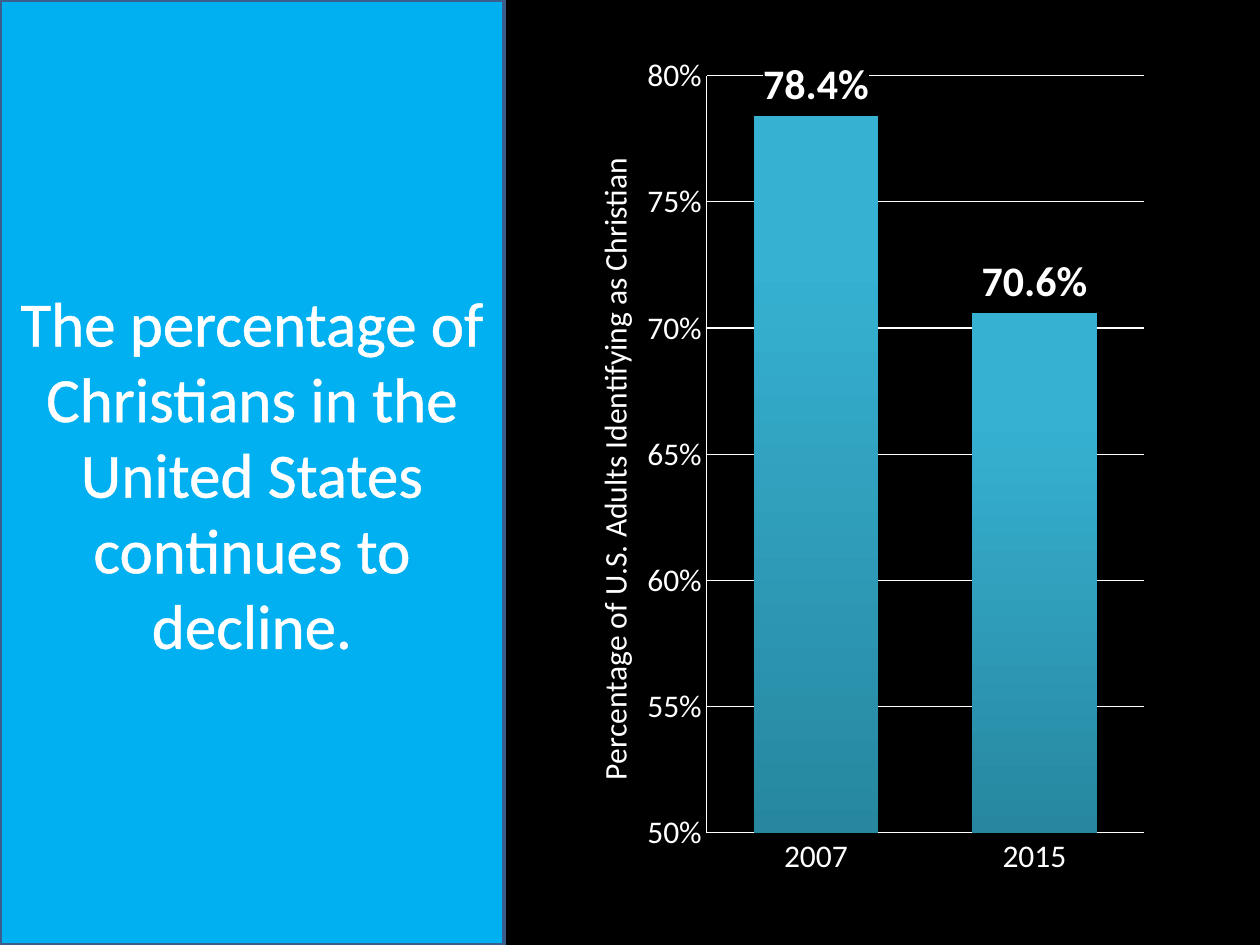
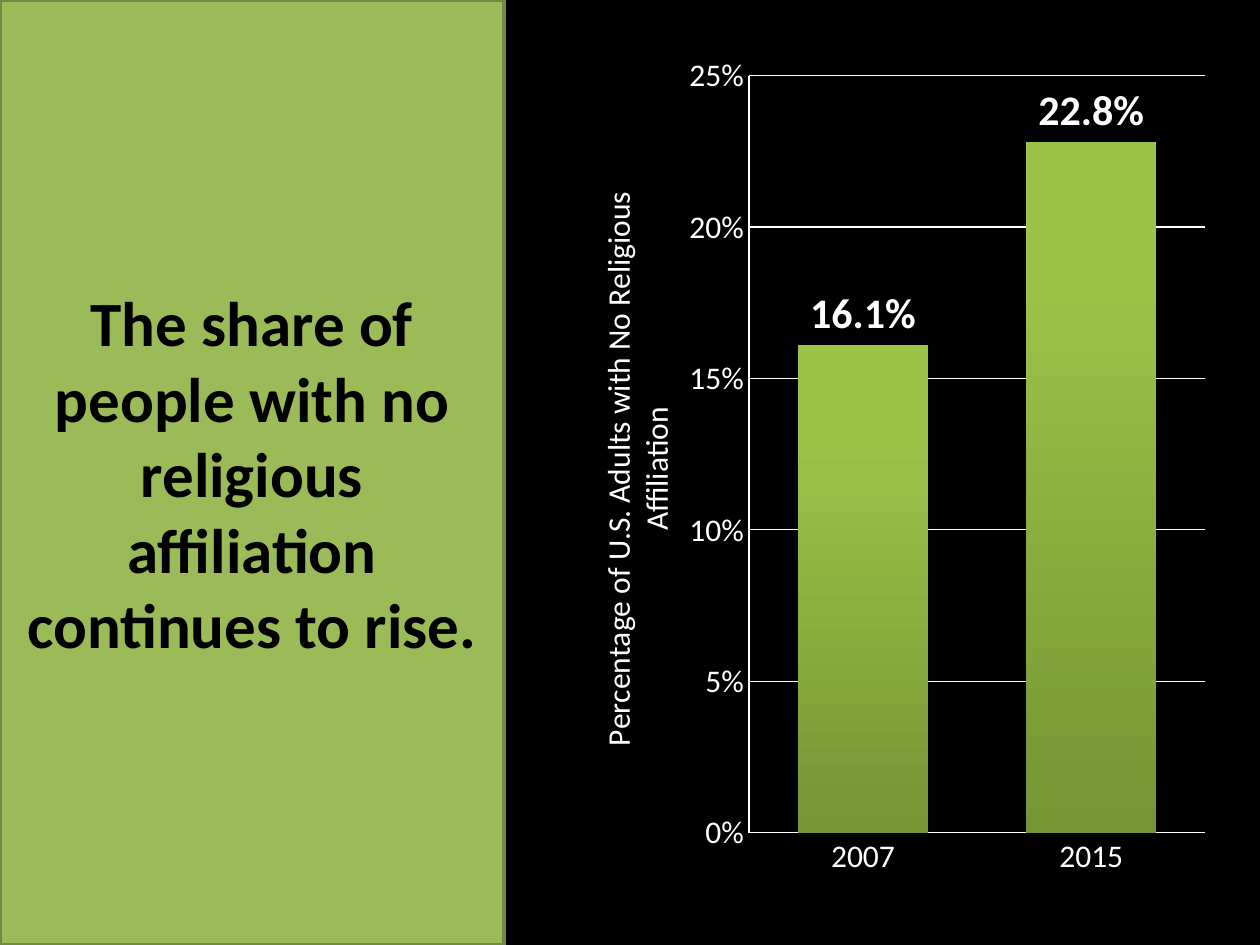
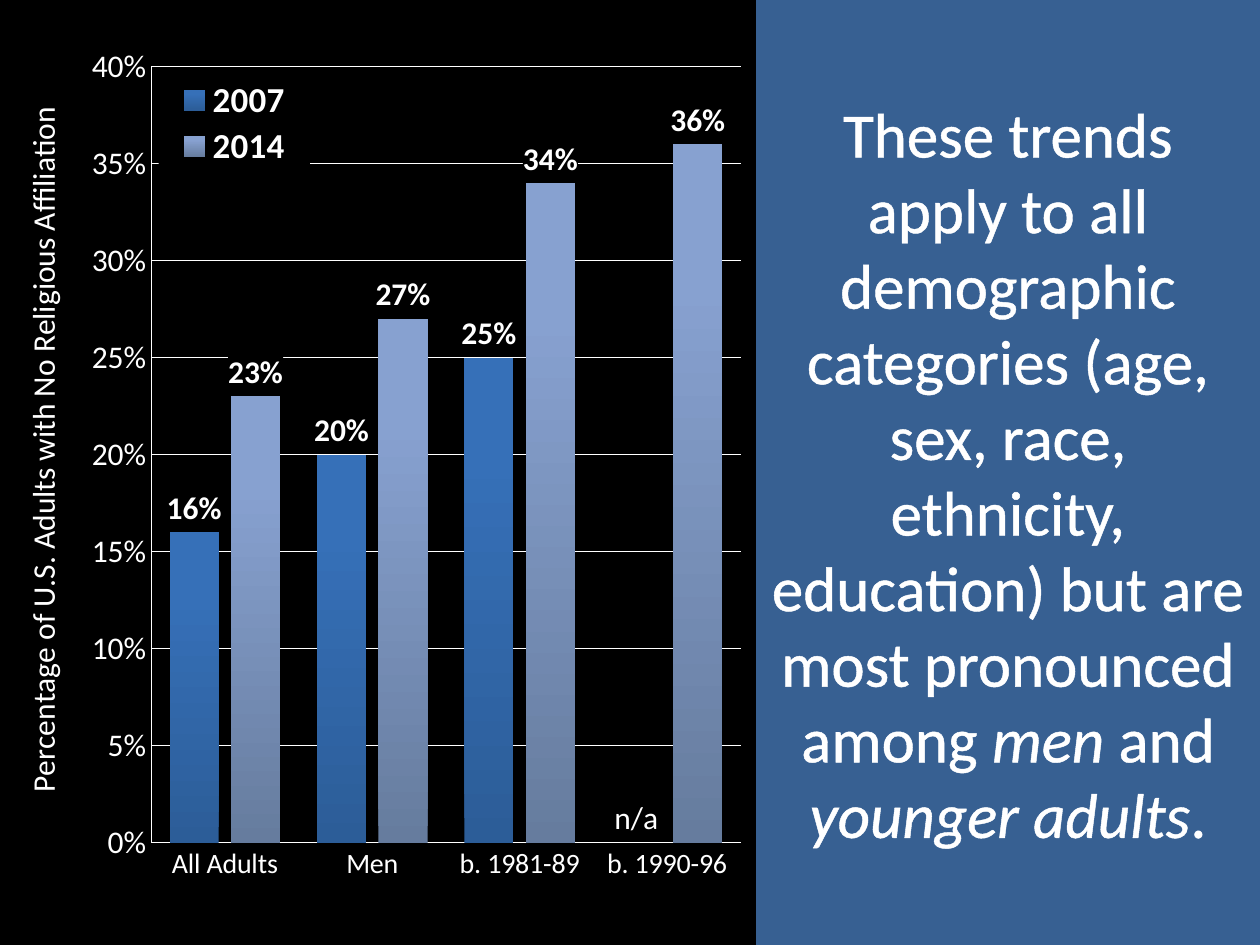
"""Three slides on religious affiliation, each a message panel beside a column chart."""
from dataclasses import dataclass

from lxml import etree
from pptx import Presentation, util as u
from pptx.chart.data import CategoryChartData
from pptx.dml.color import RGBColor
from pptx.enum import chart as chart_enums, text
from pptx.oxml import ns


@dataclass(frozen=True)
class Theme:
    """Colours, font and type sizes shared by the slides."""
    font: str = "Calibri"
    background: str = "000000"
    light: str = "FFFFFF"
    message_size: int = 36
    chart_size: int = 18
    outline_width: float = 1.45
    rule_width: float = 0.75
    border_width: float = 2
    aqua: tuple = ("2787A0", "36B1D2")
    green: tuple = ("769535", "9BC348")
    blue: tuple = ("2C5D98", "3670B8")
    pale_blue: tuple = ("667C9E", "87A1D0")


THEME = Theme()


@dataclass(frozen=True)
class Box:
    """A region of the slide in centimetres."""
    left: float
    top: float
    width: float
    height: float

    def lengths(self):
        """Return the four lengths in slide units."""
        return [u.Cm(value) for value in (self.left, self.top, self.width, self.height)]


PANEL_WIDTH, SLIDE_WIDTH, SLIDE_HEIGHT = 10.16, 25.4, 19.05
LEFT_PANEL = Box(0, 0, PANEL_WIDTH, SLIDE_HEIGHT)
RIGHT_PANEL = Box(SLIDE_WIDTH - PANEL_WIDTH, 0, PANEL_WIDTH, SLIDE_HEIGHT)


def apply(target, **values):
    """Set each named attribute on the target."""
    for name, value in values.items():
        setattr(target, name, value)


def style_font(font, color, size, **values):
    """Give a font the theme typeface with a colour and size."""
    apply(font, name=THEME.font, size=u.Pt(size), **values)
    font.color.rgb = RGBColor.from_string(color)


def style_line(line, color, width):
    """Draw a line in one colour and width."""
    line.color.rgb = RGBColor.from_string(color)
    line.width = u.Pt(width)


def solid_fill(parent, color):
    """Append a solid fill element."""
    fill = etree.SubElement(parent, ns.qn("a:solidFill"))
    etree.SubElement(fill, ns.qn("a:srgbClr"), val=color)


def outline_run(run):
    """Outline the letters of a run in the light colour."""
    properties = run.font._element
    line = etree.Element(ns.qn("a:ln"), w=str(u.Pt(THEME.outline_width)))
    solid_fill(line, THEME.light)
    properties.insert(0, line)


def back_with_background(previous):
    """Fill a chart part with the background, after the given element."""
    properties = etree.Element(ns.qn("c:spPr"))
    solid_fill(properties, THEME.background)
    previous.addnext(properties)


def place_part(part, index, fractions, inner=False):
    """Place a chart part by fractions of the chart: x, y and optionally w, h."""
    for layout in part.findall(ns.qn("c:layout")):
        part.remove(layout)
    layout = etree.Element(ns.qn("c:layout"))
    part.insert(index, layout)
    manual = etree.SubElement(layout, ns.qn("c:manualLayout"))
    settings = [("layoutTarget", "inner")] if inner else []
    settings += [("xMode", "edge"), ("yMode", "edge")]
    settings += [(name, str(value)) for name, value in zip("xywh", fractions)]
    for name, value in settings:
        etree.SubElement(manual, ns.qn(f"c:{name}"), val=value)


def add_panel(slide, box, message, fill, border=None, color=THEME.light, bold=False):
    """Turn the title into a filled panel; message is (words, italic) pairs."""
    panel = slide.shapes.title
    apply(panel, **dict(zip(("left", "top", "width", "height"), box.lengths())))
    panel.fill.solid()
    panel.fill.fore_color.rgb = RGBColor.from_string(fill)
    if border:
        style_line(panel.line, border, THEME.border_width)
    else:
        panel.line.fill.background()
    frame = panel.text_frame
    apply(frame, word_wrap=True, auto_size=text.MSO_AUTO_SIZE.NONE,
          vertical_anchor=text.MSO_ANCHOR.MIDDLE)
    paragraph = frame.paragraphs[0]
    paragraph.alignment = text.PP_ALIGN.CENTER
    for words, italic in message:
        run = paragraph.add_run()
        run.text = words
        style_font(run.font, color, THEME.message_size, bold=bold, italic=italic)
        if color == THEME.light:
            outline_run(run)


def style_axes(chart, axis_title, title_place, limits, category_size):
    """Format both axes, the gridlines and the value axis title."""
    values, categories = chart.value_axis, chart.category_axis
    for axis in (values, categories):
        apply(axis, major_tick_mark=chart_enums.XL_TICK_MARK.NONE,
              minor_tick_mark=chart_enums.XL_TICK_MARK.NONE)
        style_line(axis.format.line, THEME.light, THEME.rule_width)
    style_font(categories.tick_labels.font, THEME.light, category_size)
    apply(values, minimum_scale=limits[0], maximum_scale=limits[1], major_unit=0.05,
          has_major_gridlines=True)
    apply(values.tick_labels, number_format="0%", number_format_is_linked=False)
    style_line(values.major_gridlines.format.line, THEME.light, THEME.rule_width)
    frame = values.axis_title.text_frame
    frame.text = axis_title
    style_font(frame.paragraphs[0].runs[0].font, THEME.light, THEME.chart_size, bold=False)
    place_part(values.axis_title._element, 1, title_place)


def style_series(series, gradient, label_format, label_size):
    """Fill the columns from bottom to top and label them."""
    series.invert_if_negative = False
    fill = series.format.fill
    fill.gradient()
    fill.gradient_angle = 90
    for stop, color, position in zip(fill.gradient_stops, gradient, (0, 0.8)):
        stop.color.rgb = RGBColor.from_string(color)
        stop.position = position
    labels = series.data_labels
    apply(labels, show_value=True, number_format=label_format, number_format_is_linked=False,
          position=chart_enums.XL_LABEL_POSITION.OUTSIDE_END)
    style_font(labels.font, THEME.light, label_size, bold=True)
    back_with_background(labels._element.find(ns.qn("c:numFmt")))


def add_column_chart(slide, box, categories, series, gradients, axis_title, title_place,
                     plot_place, limits, label_format="0.0%", label_size=24,
                     category_size=THEME.chart_size):
    """Add a clustered column chart in the box and return it."""
    data = CategoryChartData()
    data.categories = categories
    for name, values in series.items():
        data.add_series(name, values)
    chart = slide.shapes.add_chart(
        chart_enums.XL_CHART_TYPE.COLUMN_CLUSTERED, *box.lengths(), data).chart
    apply(chart, has_title=False, has_legend=False)
    style_font(chart.font, THEME.light, THEME.chart_size)
    space = chart._chartSpace
    back_with_background(space.find(ns.qn("c:chart")))
    place_part(space.find(".//" + ns.qn("c:plotArea")), 0, plot_place, inner=True)
    plot = chart.plots[0]
    apply(plot, gap_width=75, overlap=-25, vary_by_categories=False)
    style_axes(chart, axis_title, title_place, limits, category_size)
    for columns, gradient in zip(plot.series, gradients):
        style_series(columns, gradient, label_format, label_size)
    return chart


def add_legend(chart, place):
    """Lay a legend over the plot."""
    chart.has_legend = True
    legend = chart.legend
    apply(legend, position=chart_enums.XL_LEGEND_POSITION.LEFT, include_in_layout=False)
    style_font(legend.font, THEME.light, 20, bold=True)
    place_part(legend._element, 1, place)
    back_with_background(legend._element.find(ns.qn("c:overlay")))


def mark_missing(series, index):
    """Label a point that has no value."""
    label = series.points[index].data_label
    label.text_frame.text = "n/a"
    style_font(label.text_frame.paragraphs[0].runs[0].font, THEME.light,
               THEME.chart_size, bold=False)
    label.position = chart_enums.XL_LABEL_POSITION.OUTSIDE_END


def build_christian_slide(slide):
    """Show the decline in Christian identification."""
    add_panel(slide, LEFT_PANEL, [
        ("The percentage of Christians in the United States continues to decline.", False),
    ], fill="00B0F0", border="3A5F8C")
    add_column_chart(
        slide, Box(11.23, 0.84, 12.07, 17.15), ["2007", "2015"],
        {"Series 1": (0.784, 0.706)}, [THEME.aqua],
        "Percentage of U.S. Adults Identifying as Christian",
        title_place=(0.05, 0.13), plot_place=(0.25, 0.04, 0.73, 0.89), limits=(0.5, 0.8))


def build_unaffiliated_slide(slide):
    """Show the rise of people with no affiliation."""
    add_panel(slide, LEFT_PANEL, [
        ("The share of people with no religious affiliation continues to rise.", False),
    ], fill="9BBB59", border="738A42", color="000000", bold=True)
    add_column_chart(
        slide, Box(11.23, 0.84, 13.34, 17.15), ["2007", "2015"],
        {"Series 1": (0.161, 0.228)}, [THEME.green],
        "Percentage of U.S. Adults with No Religious Affiliation",
        title_place=(0.05, 0.17), plot_place=(0.29, 0.04, 0.69, 0.89), limits=(0, 0.25))


def build_demographics_slide(slide):
    """Compare the unaffiliated share across groups."""
    add_panel(slide, RIGHT_PANEL, [
        ("These trends apply to all demographic categories (age, sex, race, ethnicity, "
         "education) but are most pronounced among ", False),
        ("men ", True), ("and ", False), ("younger adults", True), (".", False),
    ], fill="376092")
    chart = add_column_chart(
        slide, Box(0, 0.64, 15.24, 17.58), ["All Adults", "Men", "b. 1981-89", "b. 1990-96"],
        {"2007": (0.16, 0.2, 0.25, 0), "2014": (0.23, 0.27, 0.34, 0.36)},
        [THEME.blue, THEME.pale_blue],
        "Percentage of U.S. Adults with No Religious Affiliation",
        title_place=(0.02, 0.08), plot_place=(0.2, 0.04, 0.78, 0.89), limits=(0, 0.4),
        label_format="0%", label_size=THEME.chart_size, category_size=16)
    add_legend(chart, (0.21, 0.05, 0.2, 0.11))
    mark_missing(chart.plots[0].series[0], 3)


def main():
    """Build and save the presentation."""
    presentation = Presentation()
    apply(presentation, slide_width=u.Cm(SLIDE_WIDTH), slide_height=u.Cm(SLIDE_HEIGHT))
    background = presentation.slide_master.background.fill
    background.solid()
    background.fore_color.rgb = RGBColor.from_string(THEME.background)
    title_only = presentation.slide_layouts.get_by_name("Title Only")
    for build in (build_christian_slide, build_unaffiliated_slide, build_demographics_slide):
        build(presentation.slides.add_slide(title_only))
    presentation.save("out.pptx")


if __name__ == "__main__":
    main()
